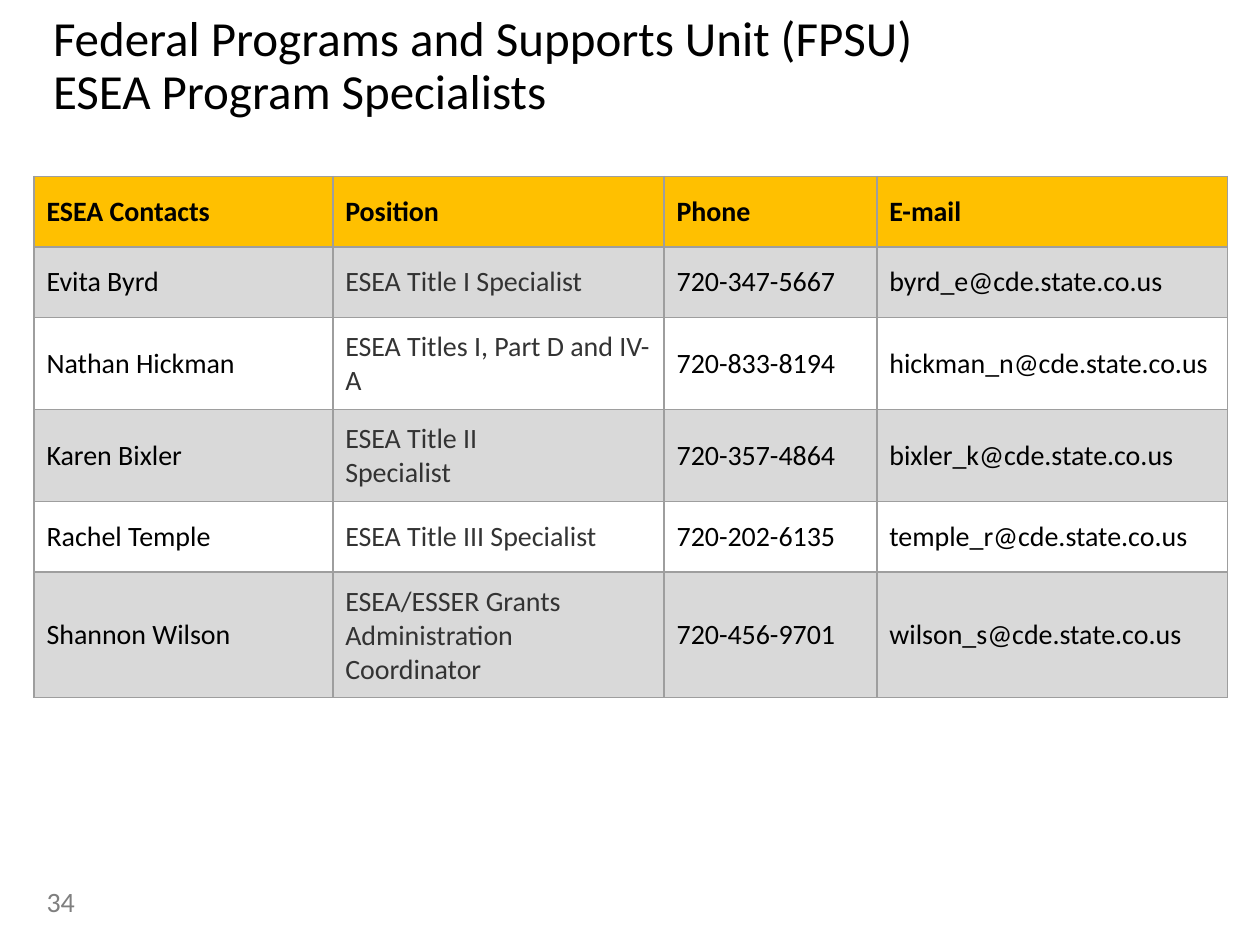
from collections import namedtuple
from dataclasses import dataclass

from lxml.etree import SubElement
from pptx import Presentation
from pptx.dml.color import RGBColor as RGB
from pptx.enum.text import MSO_ANCHOR as Anchor
from pptx.oxml.ns import qn
from pptx.util import Cm, Pt

Box = namedtuple("Box", "left top width height")


@dataclass(frozen=True)
class Theme:
    """Colours, font and type sizes of the slide."""
    font: str = "Calibri"
    title_size: int = 28
    body_size: int = 16
    ink: str = "000000"
    position_ink: str = "333333"
    muted: str = "7F7F7F"
    header: str = "FFC000"
    bands: tuple = ("D9D9D9", "FFFFFF")
    border: str = "9E9E9E"


THEME = Theme()
PADDING = Cm(0.25)
COLUMN_WIDTHS = (6.02, 6.68, 4.29, 7.06)
ROW_HEIGHTS = (1.42, 1.42, 1.47, 1.42, 1.42, 2.03)
HEADINGS = ("ESEA Contacts", "Position", "Phone", "E-mail")
CONTACTS = (
    ("Evita Byrd", "ESEA Title I Specialist", "720-347-5667", "byrd_e@cde.state.co.us"),
    ("Nathan Hickman", "ESEA Titles I, Part D and IV-A", "720-833-8194", "hickman_n@cde.state.co.us"),
    ("Karen Bixler", "ESEA Title II\nSpecialist", "720-357-4864", "bixler_k@cde.state.co.us"),
    ("Rachel Temple", "ESEA Title III Specialist", "720-202-6135", "temple_r@cde.state.co.us"),
    ("Shannon Wilson", "ESEA/ESSER Grants Administration Coordinator", "720-456-9701",
     "wilson_s@cde.state.co.us"),
)


def write(frame, text, size, color, bold=False):
    """Fill a text frame with evenly styled paragraphs."""
    frame.text = text
    frame.word_wrap = True
    for paragraph in frame.paragraphs:
        font = paragraph.font
        font.name, font.size, font.bold = THEME.font, Pt(size), bold
        font.color.rgb = RGB.from_string(color)


def add_title(slide, box):
    """Place the two-line title at the top of its box."""
    frame = slide.shapes.add_textbox(*box).text_frame
    frame.margin_left = frame.margin_top = frame.margin_right = frame.margin_bottom = 0
    write(frame, "Federal Programs and Supports Unit (FPSU)\vESEA Program Specialists",
          THEME.title_size, THEME.ink)
    frame.paragraphs[0].line_spacing = 0.9


def add_page_number(slide, box):
    """Place the page number, centred vertically in its box."""
    frame = slide.shapes.add_textbox(*box).text_frame
    frame.vertical_anchor = Anchor.MIDDLE
    write(frame, "34", THEME.body_size, THEME.muted)


def add_borders(cell):
    """Draw a thin line on all four sides of a table cell."""
    properties = cell._tc.get_or_add_tcPr()
    for side in ("a:lnL", "a:lnR", "a:lnT", "a:lnB"):
        line = SubElement(properties, qn(side), w=str(Pt(1)))
        fill = SubElement(line, qn("a:solidFill"))
        SubElement(fill, qn("a:srgbClr"), val=THEME.border)


def style_cell(cell, text, fill, color, bold):
    """Write one table cell with its padding, borders and fill."""
    cell.margin_left = cell.margin_top = cell.margin_right = cell.margin_bottom = PADDING
    cell.vertical_anchor = Anchor.MIDDLE
    add_borders(cell)
    cell.fill.solid()
    cell.fill.fore_color.rgb = RGB.from_string(fill)
    write(cell.text_frame, text, THEME.body_size, color, bold)


def add_contacts(slide, box):
    """Place the contact table with a header row and banded rows."""
    rows = (HEADINGS,) + CONTACTS
    table = slide.shapes.add_table(len(rows), len(HEADINGS), *box).table
    for column, width in zip(table.columns, COLUMN_WIDTHS):
        column.width = Cm(width)
    for row, height in zip(table.rows, ROW_HEIGHTS):
        row.height = Cm(height)
    for r, texts in enumerate(rows):
        is_header = r == 0
        fill = THEME.header if is_header else THEME.bands[(r - 1) % 2]
        for c, text in enumerate(texts):
            is_position = HEADINGS[c] == "Position" and not is_header
            color = THEME.position_ink if is_position else THEME.ink
            style_cell(table.cell(r, c), text, fill, color, is_header)


def main():
    """Build and save the slide."""
    deck = Presentation()
    deck.slide_width, deck.slide_height = Cm(25.4), Cm(19.05)
    slide = deck.slides.add_slide(deck.slide_layouts[6])
    add_title(slide, Box(Cm(1.07), Cm(0.28), Cm(23.27), Cm(2.49)))
    add_page_number(slide, Box(Cm(0.69), Cm(17.65), Cm(5.72), Cm(1.02)))
    add_contacts(slide, Box(Cm(0.69), Cm(3.56), Cm(sum(COLUMN_WIDTHS)), Cm(sum(ROW_HEIGHTS))))
    deck.save("out.pptx")


if __name__ == "__main__":
    main()
